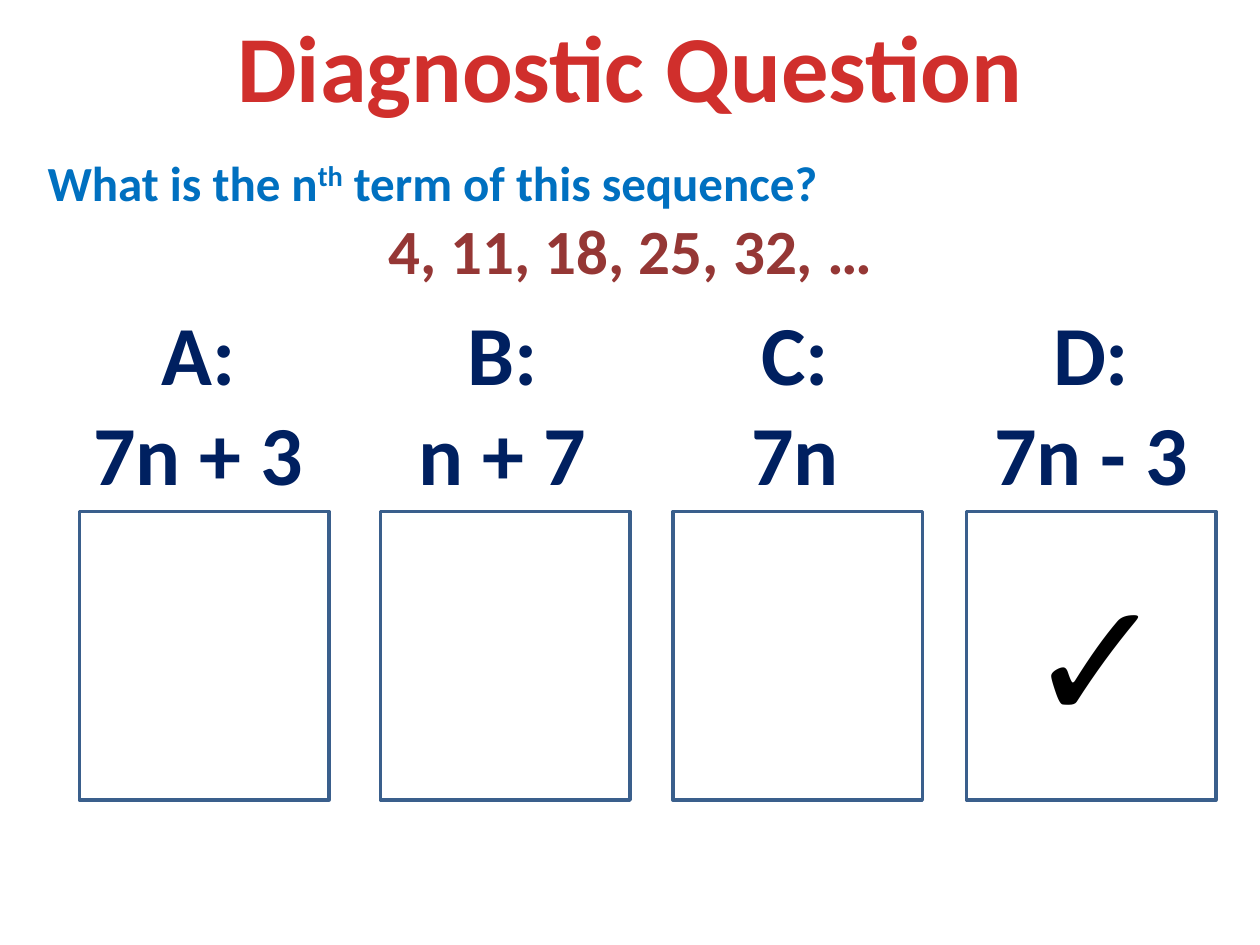
from pptx import Presentation
from pptx.dml.color import RGBColor
from pptx.enum.shapes import MSO_SHAPE
from pptx.enum.text import MSO_ANCHOR, MSO_AUTO_SIZE, PP_ALIGN
from pptx.util import Inches, Pt

LEFT, CENTER = PP_ALIGN.LEFT, PP_ALIGN.CENTER
RECTANGLE = MSO_SHAPE.RECTANGLE
TITLE_ONLY = 5

# Content
TITLE = "Diagnostic Question"
QUESTION = [("What is the n", False), ("th", True), (" term of this sequence?", False)]
SEQUENCE = "4, 11, 18, 25, 32, …"
TICK = "✓"
CORRECT = "D:"
# letter, expression, label left, label width, box left
ANSWERS = [
    ("A:", "7n + 3", 0.63, 1.89, 0.63),
    ("B:", "n + 7", 3.22, 1.54, 3.02),
    ("C:", "7n", 5.86, 0.9, 5.34),
    ("D:", "7n - 3", 7.78, 1.76, 7.67),
]

# Layout
LABEL_TOP, LABEL_HEIGHT = 2.34, 1.72
BOX_TOP, BOX_WIDTH, BOX_HEIGHT = 4.06, 1.98, 2.29
TICK_WIDTH, TICK_HEIGHT = 1.23, 1.72

RED, BLUE, BROWN = "D02F2C", "0070C0", "953735"
NAVY, BLACK, OUTLINE = "002060", "000000", "3A5F8C"


def color(hex_value):
    return RGBColor.from_string(hex_value)


def add_run(paragraph, text, size, hex_value, superscript=False):
    run = paragraph.add_run()
    run.text = text
    run.font.name = "Calibri"
    run.font.size = Pt(size)
    run.font.bold = True
    run.font.color.rgb = color(hex_value)
    if superscript:
        run.font._element.set("baseline", "30000")


def add_text_box(slide, left, top, width, height, wrap=False):
    box = slide.shapes.add_textbox(Inches(left), Inches(top), Inches(width), Inches(height))
    frame = box.text_frame
    frame.word_wrap = wrap
    frame.auto_size = MSO_AUTO_SIZE.SHAPE_TO_FIT_TEXT
    return frame


def add_title(slide):
    title = slide.shapes.title
    title.left, title.top = Inches(1.75), Inches(0.01)
    title.width, title.height = Inches(6.5), Inches(1.01)
    frame = title.text_frame
    frame.word_wrap = False
    frame.auto_size = MSO_AUTO_SIZE.SHAPE_TO_FIT_TEXT
    frame.vertical_anchor = MSO_ANCHOR.TOP
    paragraph = frame.paragraphs[0]
    paragraph.alignment = CENTER
    add_run(paragraph, TITLE, 54, RED)


def add_question(slide):
    frame = add_text_box(slide, 0.28, 1.16, 9.45, 1.18, wrap=True)
    paragraph = frame.paragraphs[0]
    paragraph.alignment = LEFT
    for text, superscript in QUESTION:
        add_run(paragraph, text, 28, BLUE, superscript)
    paragraph = frame.add_paragraph()
    paragraph.alignment = CENTER
    add_run(paragraph, SEQUENCE, 36, BROWN)


def add_answer(slide, letter, expression, label_left, label_width, box_left):
    # Label above the box
    frame = add_text_box(slide, label_left, LABEL_TOP, label_width, LABEL_HEIGHT)
    for paragraph, text in (
        (frame.paragraphs[0], letter),
        (frame.add_paragraph(), expression),
    ):
        paragraph.alignment = CENTER
        add_run(paragraph, text, 48, NAVY)

    # Empty box
    box = slide.shapes.add_shape(
        RECTANGLE, Inches(box_left), Inches(BOX_TOP), Inches(BOX_WIDTH), Inches(BOX_HEIGHT)
    )
    box.shadow.inherit = False
    box.fill.background()
    box.line.color.rgb = color(OUTLINE)
    box.line.width = Pt(2)

    # Tick centred in the correct box
    if letter == CORRECT:
        tick_left = box_left + (BOX_WIDTH - TICK_WIDTH) / 2
        tick_top = BOX_TOP + (BOX_HEIGHT - TICK_HEIGHT) / 2
        frame = add_text_box(slide, tick_left, tick_top, TICK_WIDTH, TICK_HEIGHT)
        add_run(frame.paragraphs[0], TICK, 96, BLACK)


def main():
    presentation = Presentation()
    presentation.slide_width = Inches(10)
    presentation.slide_height = Inches(7.5)
    slide = presentation.slides.add_slide(presentation.slide_layouts[TITLE_ONLY])
    add_title(slide)
    add_question(slide)
    for answer in ANSWERS:
        add_answer(slide, *answer)
    presentation.save("out.pptx")


if __name__ == "__main__":
    main()
